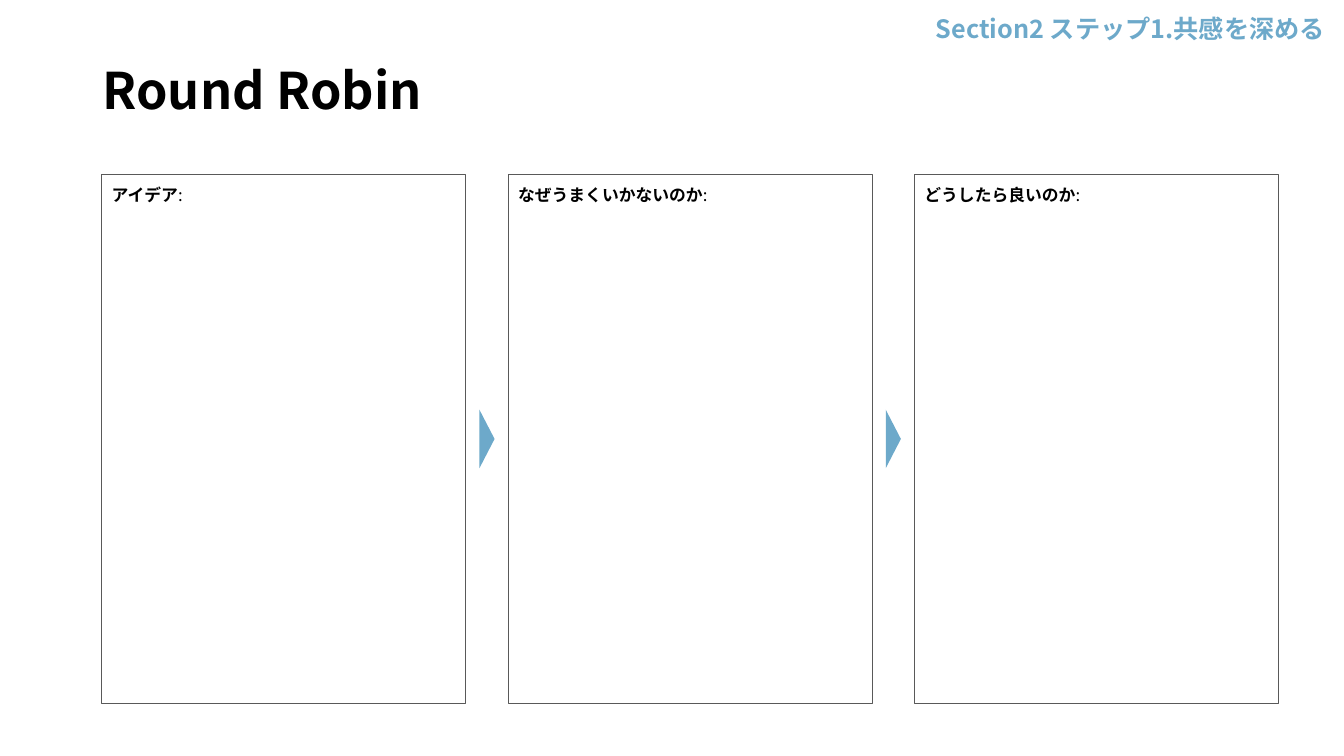
import dataclasses

import pptx
import pptx.dml.color
import pptx.enum.shapes
import pptx.enum.text
import pptx.oxml.ns
import pptx.util
from lxml import etree

PX = 9144
FONT = "Noto Sans CJK JP"
COLORS = {"ink": "000000", "paper": "FFFFFF", "edge": "595959", "sky": "6DA9CA"}
SHAPES = pptx.enum.shapes.MSO_SHAPE
ALIGN = pptx.enum.text.PP_ALIGN
ANCHOR = pptx.enum.text.MSO_ANCHOR


@dataclasses.dataclass(frozen=True)
class Box:
    left: int
    top: int
    width: int
    height: int

    def emu(self) -> list[int]:
        return [side * PX for side in dataclasses.astuple(self)]


@dataclasses.dataclass(frozen=True)
class Label:
    box: Box
    text: str
    size: int
    color: str
    align: ALIGN = ALIGN.LEFT
    anchor: ANCHOR = ANCHOR.TOP
    lines: float = 1.0


TITLE = Label(Box(92, 52, 1150, 72), "Round Robin", 36, "ink",
              anchor=ANCHOR.BOTTOM, lines=0.9)
HEADER = Label(Box(657, 8, 667, 40), "Section2 ステップ1.共感を深める", 18, "sky",
               align=ALIGN.RIGHT)
PANELS = ["アイデア", "なぜうまくいかないのか", "どうしたら良いのか"]
FIRST = Box(101, 173, 361, 525)
STEP = 403
ARROW = Box(454, 428, 58, 15)


def tint(name: str) -> pptx.dml.color.RGBColor:
    return pptx.dml.color.RGBColor.from_string(COLORS[name])


def style(para, size: int, color: str) -> None:
    font = para.font
    font.name = FONT
    font.size = pptx.util.Pt(size)
    font.color.rgb = tint(color)
    props = para._p.pPr.find(pptx.oxml.ns.qn("a:defRPr"))
    latin = props.find(pptx.oxml.ns.qn("a:latin"))
    east = etree.Element(pptx.oxml.ns.qn("a:ea"), typeface=FONT)
    latin.addnext(east)


def write(slide, label: Label) -> None:
    frame = slide.shapes.add_textbox(*label.box.emu()).text_frame
    frame.word_wrap = True
    frame.vertical_anchor = label.anchor
    para = frame.paragraphs[0]
    para.text = label.text
    para.alignment = label.align
    para.line_spacing = label.lines
    style(para, label.size, label.color)
    para.font.bold = True


def shape(slide, kind: SHAPES, box: Box, fill: str):
    item = slide.shapes.add_shape(kind, *box.emu())
    item.shadow.inherit = False
    item.fill.solid()
    item.fill.fore_color.rgb = tint(fill)
    return item


def panel(slide, box: Box, head: str) -> None:
    item = shape(slide, SHAPES.RECTANGLE, box, "paper")
    item.line.color.rgb = tint("edge")
    item.line.width = pptx.util.Pt(0.75)
    frame = item.text_frame
    frame.word_wrap = True
    frame.vertical_anchor = ANCHOR.TOP
    frame.margin_left = frame.margin_right = 10 * PX
    frame.margin_top = frame.margin_bottom = 10 * PX
    para = frame.paragraphs[0]
    para.alignment = ALIGN.LEFT
    style(para, 12, "ink")
    for text, bold in ((head, True), (":", False)):
        run = para.add_run()
        run.text = text
        run.font.bold = bold


def arrow(slide, box: Box) -> None:
    item = shape(slide, SHAPES.ISOSCELES_TRIANGLE, box, "sky")
    item.line.fill.background()
    item.rotation = 90


def main() -> None:
    deck = pptx.Presentation()
    deck.slide_width = 1333 * PX
    deck.slide_height = 750 * PX
    slide = deck.slides.add_slide(deck.slide_layouts[6])
    write(slide, TITLE)
    for i, head in enumerate(PANELS):
        panel(slide, dataclasses.replace(FIRST, left=FIRST.left + i * STEP), head)
    for i in range(len(PANELS) - 1):
        arrow(slide, dataclasses.replace(ARROW, left=ARROW.left + i * STEP))
    write(slide, HEADER)
    deck.save("out.pptx")


if __name__ == "__main__":
    main()
